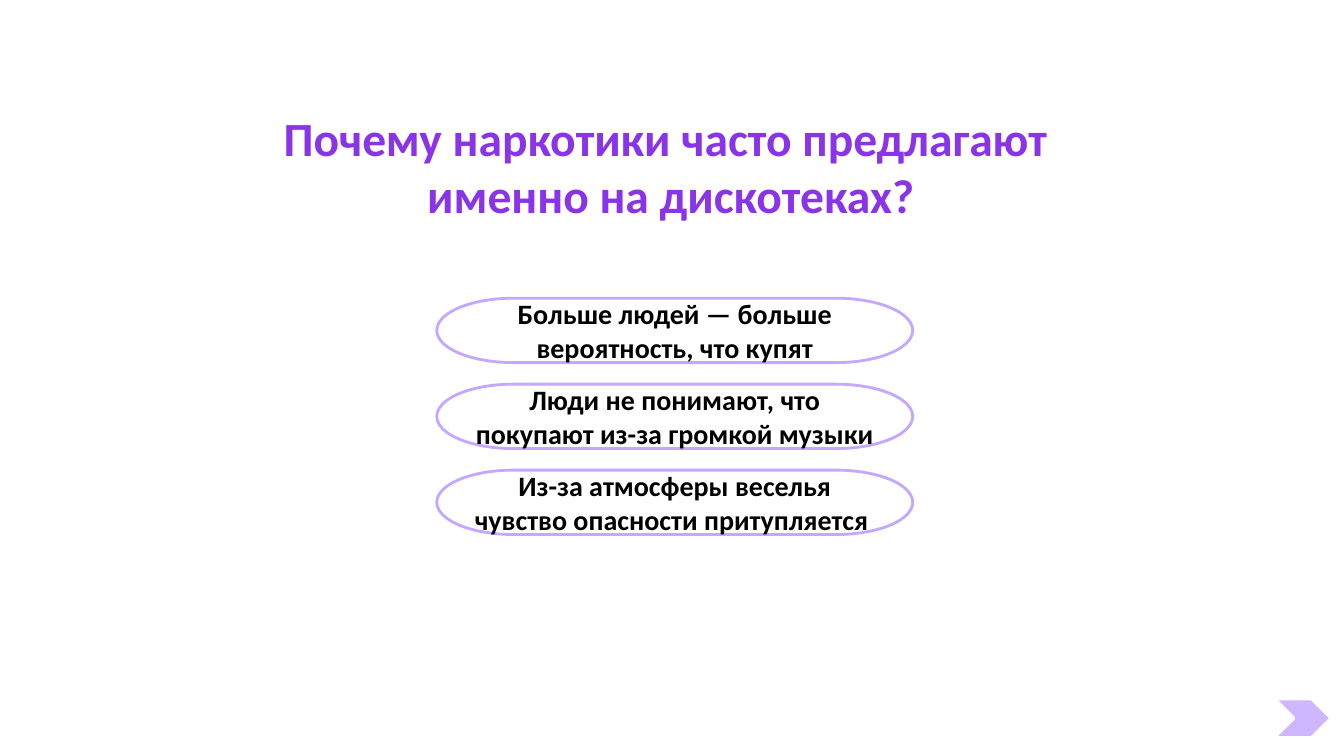
from pptx import Presentation
from pptx.dml.color import RGBColor
from pptx.enum.shapes import MSO_SHAPE as SHAPE
from pptx.enum.text import MSO_ANCHOR as ANCHOR, MSO_AUTO_SIZE as AUTO, PP_ALIGN as ALIGN
from pptx.util import Pt


def rgb(value):
    return RGBColor.from_string(value)


def write(tf, text, size, color):
    tf.word_wrap = True
    tf.auto_size = AUTO.NONE
    tf.text = text
    for p in tf.paragraphs:
        p.alignment = ALIGN.CENTER
        p.font.name = "Calibri"
        p.font.size = Pt(size)
        p.font.bold = True
        p.font.color.rgb = rgb(color)


prs = Presentation()
prs.slide_width, prs.slide_height = Pt(960), Pt(540)
s = prs.slides.add_slide(prs.slide_layouts[5])

# Question
title = s.shapes.title
title.left, title.top, title.width, title.height = Pt(126), Pt(74.2), Pt(706.3), Pt(90)
title.text_frame.vertical_anchor = ANCHOR.TOP
write(title.text_frame,
      "Почему наркотики часто предлагают \nименно на дискотеках?", 34, "8A34E8")

# Answer options
answers = [
    "Больше людей — больше вероятность, что купят",
    "Люди не понимают, что покупают из-за громкой музыки",
    "Из-за атмосферы веселья чувство опасности притупляется ",
]
for i, answer in enumerate(answers):
    sp = s.shapes.add_shape(SHAPE.FLOWCHART_TERMINATOR,
                            Pt(312), Pt(213 + 61.4 * i), Pt(340), Pt(46))
    sp.shadow.inherit = False
    sp.fill.background()
    sp.line.color.rgb = rgb("C4A7FF")
    sp.line.width = Pt(2)
    sp.text_frame.vertical_anchor = ANCHOR.MIDDLE
    write(sp.text_frame, answer, 20, "000000")

# Next-slide arrow
arrow = s.shapes.add_shape(SHAPE.CHEVRON, Pt(910), Pt(499), Pt(41), Pt(28))
arrow.shadow.inherit = False
arrow.fill.solid()
arrow.fill.fore_color.rgb = rgb("CFB7FF")
arrow.line.color.rgb = rgb("FFFFFF")
arrow.line.width = Pt(2.5)

prs.save("out.pptx")
